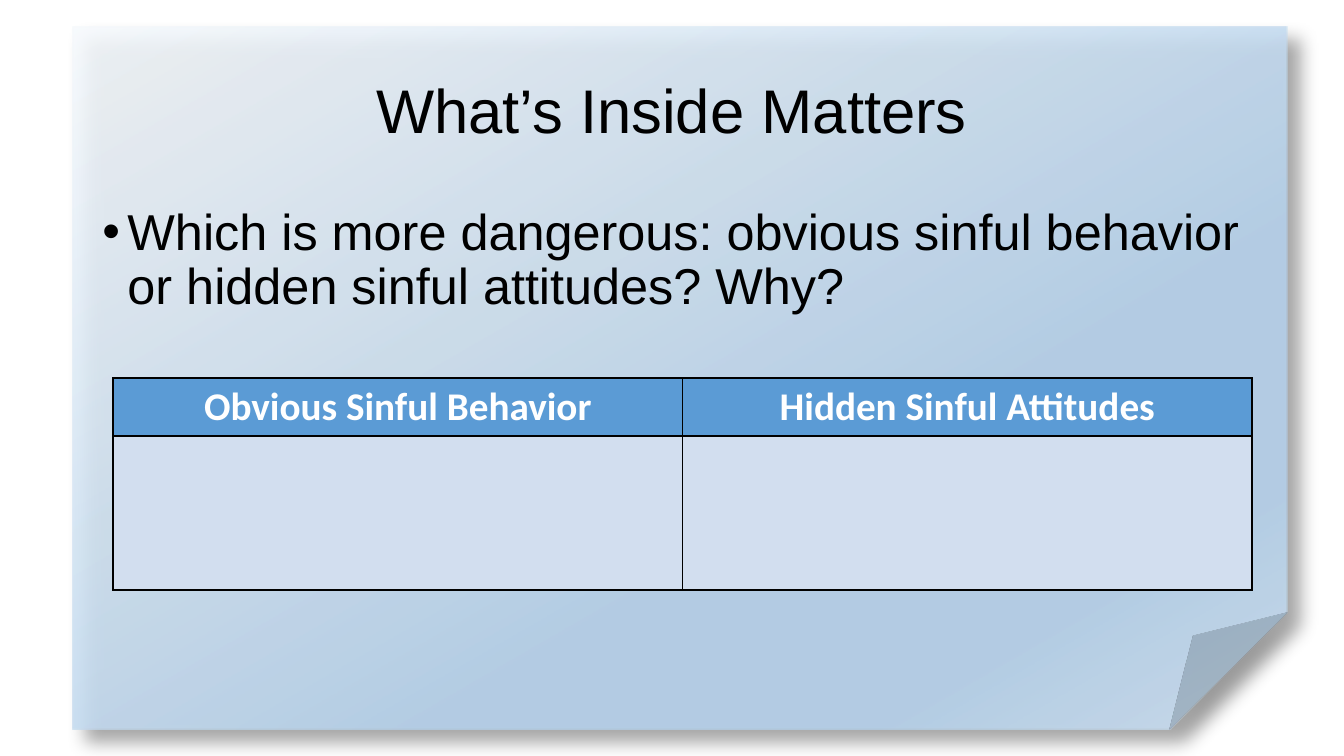
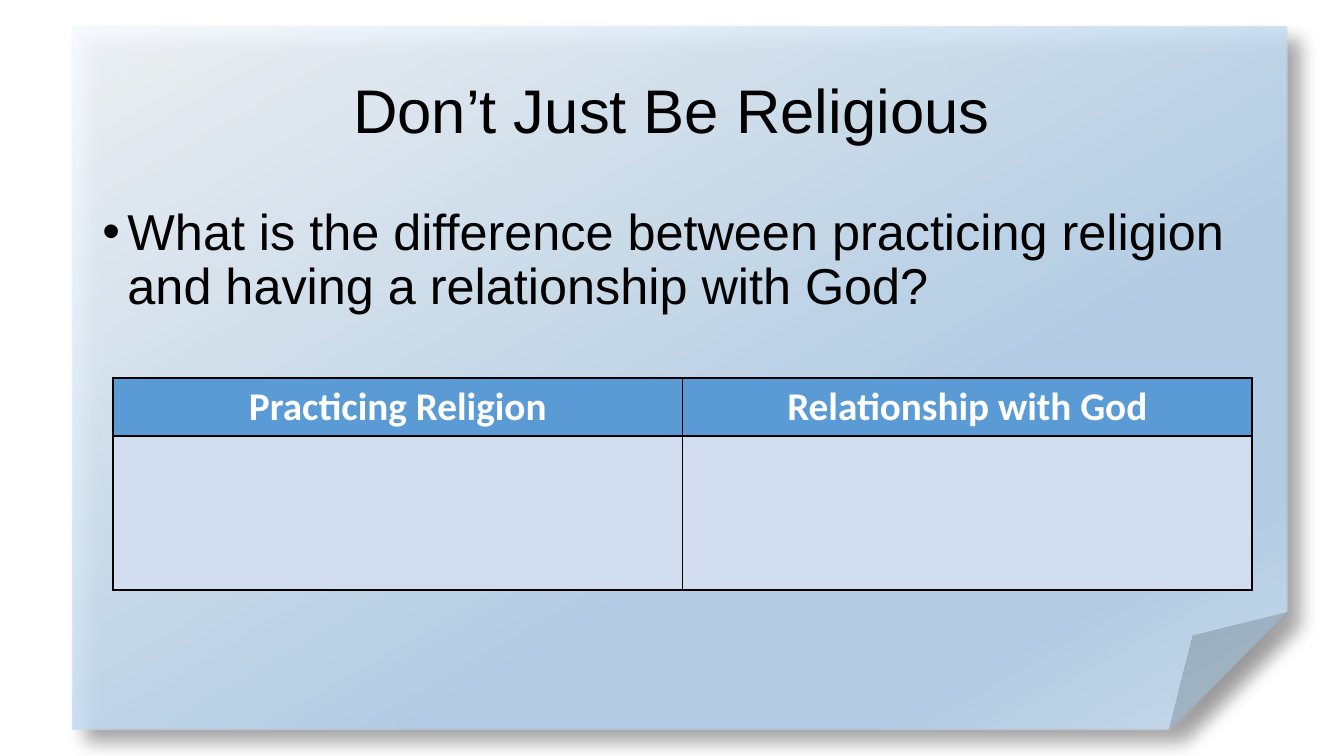
import lxml.etree
import pptx
import pptx.dml.color
import pptx.enum.shapes
import pptx.enum.text
import pptx.oxml
import pptx.oxml.ns
import pptx.util

Pt = pptx.util.Pt
ALIGN = pptx.enum.text.PP_ALIGN
ANCHOR = pptx.enum.text.MSO_ANCHOR

COLOURS = {
    "text": "000000",
    "header text": "FFFFFF",
    "header": "5B9BD5",
    "cell": "D2DEEF",
    "border": "000000",
    "shadow": "000000",
    "paper light": "F7FAFD",
    "paper": "B5D2EC",
    "paper edge": "CEE1F2",
}
PAPER_STOPS = [(0, "paper light"), (64, "paper"), (83, "paper"), (100, "paper edge")]
PAPER_OPACITY = 87
PAPER_ANGLE = 60

FONTS = {
    "title": {"name": "Arial", "size": Pt(44), "bold": False},
    "question": {"name": "Arial", "size": Pt(36), "bold": False},
    "header": {"name": "Calibri", "size": Pt(28), "bold": True},
}
PARAGRAPHS = {
    "title": {"alignment": ALIGN.CENTER, "line_spacing": 0.9},
    "question": {"alignment": ALIGN.LEFT, "line_spacing": 0.9},
    "header": {"alignment": ALIGN.CENTER},
}

# left, top, width, height
PAPER_AREA = (51.8, 19.4, 867.6, 502)
TITLE_AREA = (66, 28.8, 828, 104.4)
QUESTION_AREA = (66, 144, 828, 342.7)
TABLE_AREA = (80.7, 270, 813.6, 151.4)
HEADER_HEIGHT = 41.4
BULLET_INDENT = 18

PAGES = [
    {
        "title": "What’s Inside Matters",
        "question": "Which is more dangerous: obvious sinful behavior "
                    "or hidden sinful attitudes? Why?",
        "headers": ["Obvious Sinful Behavior", "Hidden Sinful Attitudes"],
    },
    {
        "title": "Don’t Just Be Religious",
        "question": "What is the difference between practicing religion "
                    "and having a relationship with God?",
        "headers": ["Practicing Religion", "Relationship with God"],
    },
]


def rgb(name):
    return pptx.dml.color.RGBColor.from_string(COLOURS[name])


def points(area):
    return [Pt(length) for length in area]


def apply_format(target, values):
    for name, value in values.items():
        setattr(target, name, value)


def parse_drawing(tag, attributes, content):
    """Return a DrawingML element made from its tag, attributes and inner XML."""
    namespace = pptx.oxml.ns.nsdecls("a")
    return pptx.oxml.parse_xml(f"<a:{tag} {namespace} {attributes}>{content}</a:{tag}>")


def colour_xml(name, opacity):
    return (f'<a:srgbClr val="{COLOURS[name]}">'
            f'<a:alpha val="{opacity * 1000}"/></a:srgbClr>')


def write_paragraph(para, text, style, colour):
    apply_format(para, PARAGRAPHS[style])
    span = para.add_run()
    span.text = text
    apply_format(span.font, FONTS[style])
    span.font.color.rgb = rgb(colour)


def add_paper(page):
    """Add the folded sheet with its translucent gradient and soft shadow."""
    paper = page.shapes.add_shape(
        pptx.enum.shapes.MSO_SHAPE.FOLDED_CORNER, *points(PAPER_AREA))
    paper.line.fill.background()
    paper.shadow.inherit = False
    stops = "".join(
        f'<a:gs pos="{position * 1000}">{colour_xml(name, PAPER_OPACITY)}</a:gs>'
        for position, name in PAPER_STOPS)
    gradient = parse_drawing(
        "gradFill", 'rotWithShape="1"',
        f'<a:gsLst>{stops}</a:gsLst><a:lin ang="{PAPER_ANGLE * 60000}" scaled="0"/>')
    properties = paper.element.spPr
    properties.find(pptx.oxml.ns.qn("a:prstGeom")).addnext(gradient)
    shadow = parse_drawing(
        "outerShdw",
        f'blurRad="{Pt(13)}" dist="{Pt(13)}" dir="{45 * 60000}" '
        'algn="tl" rotWithShape="0"',
        colour_xml("shadow", 40))
    properties.find(pptx.oxml.ns.qn("a:effectLst")).append(shadow)


def add_text(page, area, text, style, anchor, bullet=False):
    box = page.shapes.add_textbox(*points(area))
    frame = box.text_frame
    apply_format(frame, {"word_wrap": True, "vertical_anchor": anchor})
    para = frame.paragraphs[0]
    if bullet:
        add_bullet(para)
    write_paragraph(para, text, style, "text")


def add_bullet(para):
    properties = para._p.get_or_add_pPr()
    properties.set("marL", str(Pt(BULLET_INDENT)))
    properties.set("indent", str(-Pt(BULLET_INDENT)))
    properties.append(parse_drawing("buFont", 'typeface="Arial"', ""))
    properties.append(parse_drawing("buChar", 'char="•"', ""))


def format_cell(cell, fill):
    """Give a cell thin borders on all sides and a plain fill."""
    properties = cell._tc.get_or_add_tcPr()
    for side in ("lnL", "lnR", "lnT", "lnB"):
        properties.append(parse_drawing(
            side, f'w="{Pt(1)}"',
            f'<a:solidFill>{colour_xml("border", 100)}</a:solidFill>'))
    cell.fill.solid()
    cell.fill.fore_color.rgb = rgb(fill)


def add_comparison(page, headers):
    """Add a table with a header row above one empty row for answers."""
    table = page.shapes.add_table(2, len(headers), *points(TABLE_AREA)).table
    width, height = TABLE_AREA[2:]
    for row, row_height in zip(table.rows, (HEADER_HEIGHT, height - HEADER_HEIGHT)):
        row.height = Pt(row_height)
    for index, header in enumerate(headers):
        table.columns[index].width = Pt(width / len(headers))
        for row_index, fill in enumerate(("header", "cell")):
            format_cell(table.cell(row_index, index), fill)
        para = table.cell(0, index).text_frame.paragraphs[0]
        write_paragraph(para, header, "header", "header text")


def main():
    deck = pptx.Presentation()
    apply_format(deck, {"slide_width": Pt(960), "slide_height": Pt(540)})
    for content in PAGES:
        page = deck.slides.add_slide(deck.slide_layouts[6])
        add_paper(page)
        add_text(page, TITLE_AREA, content["title"], "title", ANCHOR.MIDDLE)
        add_text(page, QUESTION_AREA, content["question"], "question",
                 ANCHOR.TOP, bullet=True)
        add_comparison(page, content["headers"])
    deck.save("out.pptx")


if __name__ == "__main__":
    main()
